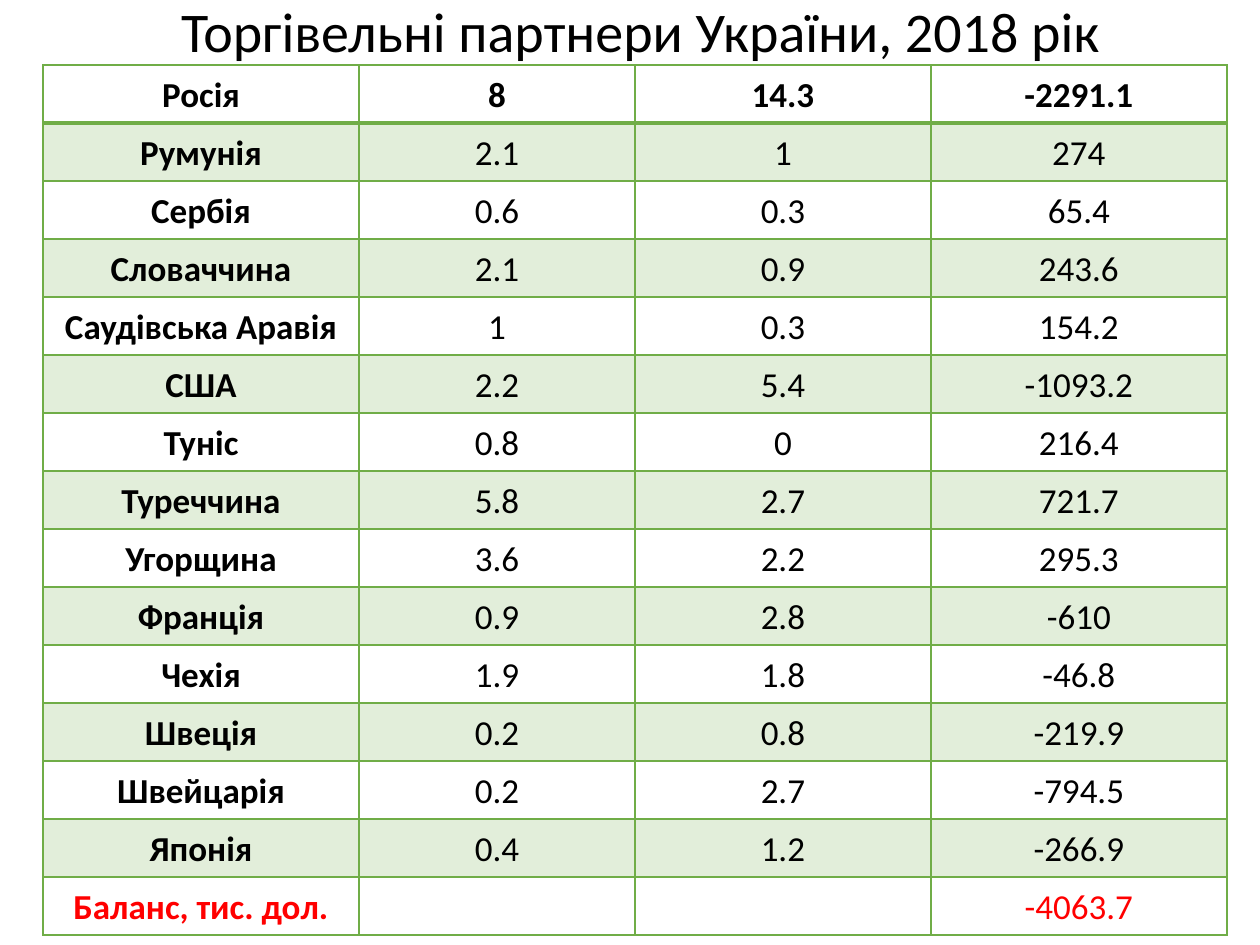
from lxml import etree
from pptx import Presentation
from pptx import util as u
from pptx.dml.color import RGBColor
from pptx.enum import text
from pptx.oxml.ns import qn

PX = 914400 / 126
COLORS = {"ink": "000000", "green": "70AD47", "total": "FF0000"}
BAND_ALPHA = 20
COLUMN_WIDTHS = [316, 276, 296, 296]
ROW_HEIGHT = 58
PARTNERS = [
    ("Росія", "8", "14.3", "-2291.1"),
    ("Румунія", "2.1", "1", "274"),
    ("Сербія", "0.6", "0.3", "65.4"),
    ("Словаччина", "2.1", "0.9", "243.6"),
    ("Саудівська Аравія", "1", "0.3", "154.2"),
    ("США", "2.2", "5.4", "-1093.2"),
    ("Туніс", "0.8", "0", "216.4"),
    ("Туреччина", "5.8", "2.7", "721.7"),
    ("Угорщина", "3.6", "2.2", "295.3"),
    ("Франція", "0.9", "2.8", "-610"),
    ("Чехія", "1.9", "1.8", "-46.8"),
    ("Швеція", "0.2", "0.8", "-219.9"),
    ("Швейцарія", "0.2", "2.7", "-794.5"),
    ("Японія", "0.4", "1.2", "-266.9"),
    ("Баланс, тис. дол.", "", "", "-4063.7"),
]


def emu(px):
    return u.Emu(round(px * PX))


def apply(target, values):
    for name, value in values.items():
        setattr(target, name, value)


class SlideBuilder:
    font_name = "Calibri"
    inset = 6

    def __init__(self, slide):
        self.slide = slide

    def label(self, frame, content, size, color="ink", bold=False, spacing=1.0):
        paragraph = frame.paragraphs[0]
        apply(paragraph, {"alignment": text.PP_ALIGN.CENTER, "line_spacing": spacing})
        holder = paragraph
        if content:
            holder = paragraph.add_run()
            holder.text = content
        apply(holder.font, {"name": self.font_name, "size": u.Pt(size), "bold": bold})
        holder.font.color.rgb = RGBColor.from_string(COLORS[color])

    def title(self, content, left, top, width, height):
        heading = self.slide.shapes.title
        apply(heading, {"left": emu(left), "top": emu(top),
                        "width": emu(width), "height": emu(height)})
        apply(heading.text_frame, {"word_wrap": False,
                                   "auto_size": text.MSO_AUTO_SIZE.SHAPE_TO_FIT_TEXT,
                                   "vertical_anchor": text.MSO_ANCHOR.TOP})
        self.label(heading.text_frame, content, 32)

    def borders(self, cell, widths):
        """Put the four edge lines, in points, ahead of the cell's fill."""
        properties = cell._tc.get_or_add_tcPr()
        for index, (edge, width) in enumerate(widths.items()):
            line = etree.Element(qn(f"a:{edge}"), w=str(u.Pt(width)))
            fill = etree.SubElement(line, qn("a:solidFill"))
            etree.SubElement(fill, qn("a:srgbClr"), val=COLORS["green"])
            properties.insert(index, line)

    def band(self, cell):
        cell.fill.solid()
        cell.fill.fore_color.rgb = RGBColor.from_string(COLORS["green"])
        color = cell._tc.tcPr.find(f".//{qn('a:srgbClr')}")
        etree.SubElement(color, qn("a:alpha"), val=str(BAND_ALPHA * 1000))

    def table(self, rows, left, top):
        frame = self.slide.shapes.add_table(
            len(rows), len(COLUMN_WIDTHS), emu(left), emu(top),
            emu(sum(COLUMN_WIDTHS)), emu(ROW_HEIGHT * len(rows)))
        grid = frame.table
        apply(grid, {"first_row": False, "horz_banding": False})
        for column, width in zip(grid.columns, COLUMN_WIDTHS):
            column.width = emu(width)
        margins = {f"margin_{side}": emu(self.inset)
                   for side in ("left", "right", "top", "bottom")}
        last = len(rows) - 1
        for r, values in enumerate(rows):
            grid.rows[r].height = emu(ROW_HEIGHT)
            for c, value in enumerate(values):
                cell = grid.cell(r, c)
                apply(cell, margins)
                self.label(cell.text_frame, value, 20,
                           color="total" if r == last else "ink",
                           bold=r == 0 or c == 0, spacing=1.07)
                if r % 2:
                    self.band(cell)
                else:
                    cell.fill.background()
                self.borders(cell, {"lnL": 1, "lnR": 1,
                                    "lnT": 2 if r == 1 else 1,
                                    "lnB": 2 if r == 0 else 1})


def main():
    deck = Presentation()
    apply(deck, {"slide_width": emu(1260), "slide_height": emu(945)})
    title_only = deck.slide_layouts[5]
    builder = SlideBuilder(deck.slides.add_slide(title_only))
    builder.title("Торгівельні партнери України, 2018 рік", 164, -10, 954, 81)
    builder.table(PARTNERS, 43, 65)
    deck.save("out.pptx")


if __name__ == "__main__":
    main()
